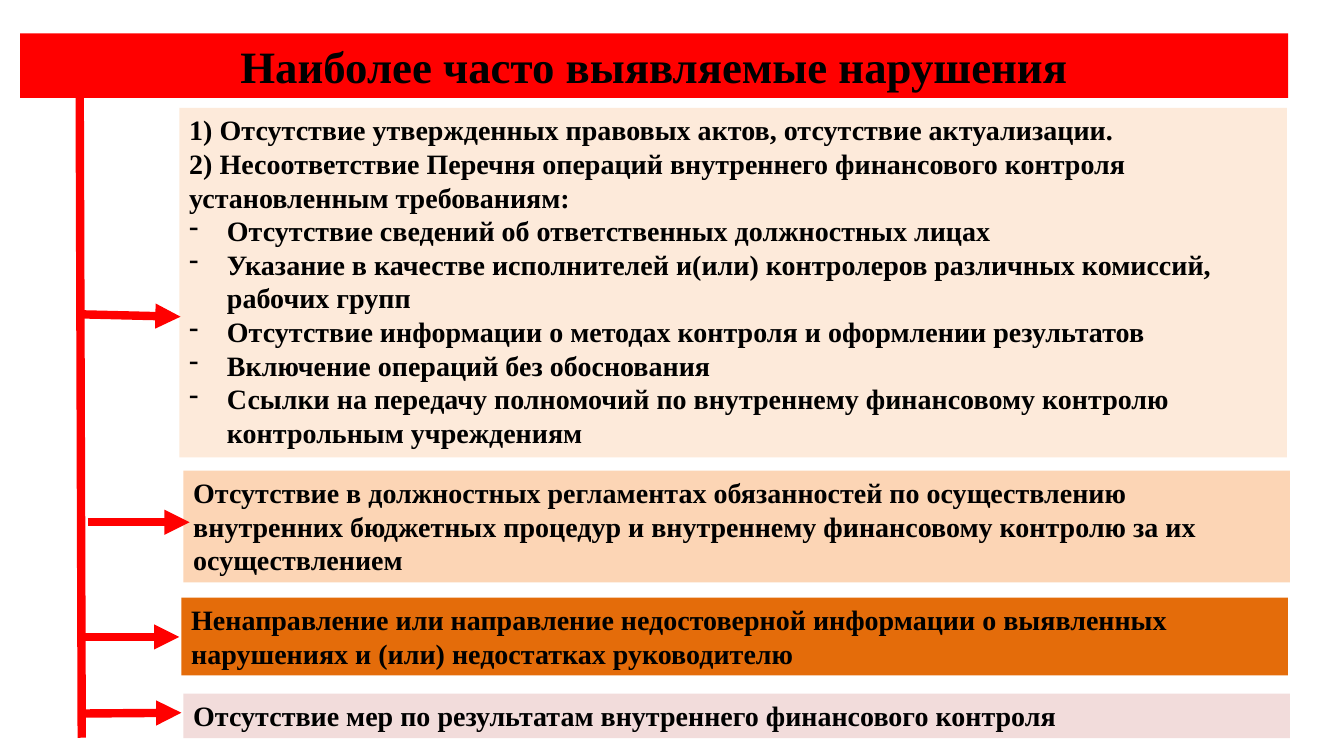
"""Builds a slide listing the most frequent control violations."""
from dataclasses import dataclass

from lxml import etree
from pptx import Presentation
from pptx.dml.color import RGBColor
from pptx.enum.shapes import MSO_CONNECTOR
from pptx.enum.text import MSO_ANCHOR, MSO_AUTO_SIZE, PP_ALIGN
from pptx.oxml.ns import qn
from pptx.util import Cm, Pt

LINE = MSO_CONNECTOR.STRAIGHT
MIDDLE = MSO_ANCHOR.MIDDLE
TOP = MSO_ANCHOR.TOP
FIXED = MSO_AUTO_SIZE.NONE
CENTER = PP_ALIGN.CENTER
LEFT = PP_ALIGN.LEFT


@dataclass(frozen=True)
class Theme:
    """Colours, font and sizes of the slide."""
    font: str = "Times New Roman"
    ink: str = "000000"
    red: str = "FF0000"
    pale: str = "FDEADA"
    peach: str = "FCD5B5"
    orange: str = "E46C0A"
    rose: str = "F2DCDB"
    head: int = 32
    body: int = 20
    stroke: int = 6
    hang: float = 0.95


class Board:
    """Holds the theme and the current slide."""

    def __init__(self, slide, theme):
        self.slide = slide
        self.theme = theme

    def fill(self, shape, color):
        shape.fill.solid()
        shape.fill.fore_color.rgb = RGBColor.from_string(color)

    def label(self, para, text, size, align):
        para.alignment = align
        run = para.add_run()
        run.text = text
        font = run.font
        font.name = self.theme.font
        font.size = Pt(size)
        font.bold = True
        font.color.rgb = RGBColor.from_string(self.theme.ink)

    def dash(self, para):
        props = para._p.get_or_add_pPr()
        hang = Cm(self.theme.hang)
        props.set("marL", str(hang))
        props.set("indent", str(-hang))
        etree.SubElement(props, qn("a:buFontTx"))
        etree.SubElement(props, qn("a:buChar")).set("char", "-")

    def title(self, text, left, top, width, height):
        shape = self.slide.shapes.title
        shape.left, shape.top = Cm(left), Cm(top)
        shape.width, shape.height = Cm(width), Cm(height)
        self.fill(shape, self.theme.red)
        frame = shape.text_frame
        frame.auto_size = FIXED
        frame.word_wrap = True
        frame.vertical_anchor = MIDDLE
        self.label(frame.paragraphs[0], text, self.theme.head, CENTER)

    def panel(self, left, top, width, height, color, lines, points=()):
        box = self.slide.shapes.add_textbox(
            Cm(left), Cm(top), Cm(width), Cm(height))
        self.fill(box, color)
        frame = box.text_frame
        frame.word_wrap = True
        frame.vertical_anchor = TOP
        for i, text in enumerate((*lines, *points)):
            para = frame.add_paragraph() if i else frame.paragraphs[0]
            if i >= len(lines):
                self.dash(para)
            self.label(para, text, self.theme.body, LEFT)

    def line(self, x1, y1, x2, y2, arrow=False):
        link = self.slide.shapes.add_connector(
            LINE, Cm(x1), Cm(y1), Cm(x2), Cm(y2))
        link.line.width = Pt(self.theme.stroke)
        link.line.color.rgb = RGBColor.from_string(self.theme.red)
        if arrow:
            stroke = link.line._get_or_add_ln()
            etree.SubElement(stroke, qn("a:tailEnd")).set("type", "triangle")
        etree.SubElement(link._element.spPr, qn("a:effectLst"))


def main():
    deck = Presentation()
    deck.slide_width, deck.slide_height = Cm(33.87), Cm(19.05)
    theme = Theme()
    board = Board(deck.slides.add_slide(deck.slide_layouts[5]), theme)

    board.title("Наиболее часто выявляемые нарушения", 0.51, 0.84, 31.95, 1.63)
    board.panel(
        4.52, 2.72, 27.91, 8.81, theme.pale,
        ["1) Отсутствие утвержденных правовых актов, отсутствие актуализации.",
         "2) Несоответствие Перечня операций внутреннего финансового контроля "
         "установленным требованиям:"],
        ["Отсутствие сведений об ответственных должностных лицах",
         "Указание в качестве исполнителей и(или) контролеров различных "
         "комиссий, рабочих групп",
         "Отсутствие информации о методах контроля и оформлении результатов",
         "Включение операций без обоснования",
         "Ссылки на передачу полномочий по внутреннему финансовому контролю "
         "контрольным учреждениям"])

    panels = [
        (4.62, 11.86, 2.82, theme.peach,
         "Отсутствие в должностных регламентах обязанностей по осуществлению "
         "внутренних бюджетных процедур и внутреннему финансовому контролю "
         "за их осуществлением"),
        (4.57, 15.06, 1.96, theme.orange,
         "Ненаправление или направление недостоверной информации о выявленных "
         "нарушениях и (или) недостатках руководителю"),
        (4.62, 17.48, 1.12, theme.rose,
         "Отсутствие мер по результатам внутреннего финансового контроля"),
    ]
    for left, top, height, color, text in panels:
        board.panel(left, top, 27.89, height, color, [text])

    board.line(2.01, 2.46, 2.06, 18.59)
    arrows = [
        (2.01, 7.92, 4.55, 7.98),
        (2.21, 13.16, 4.78, 13.16),
        (1.96, 16.05, 4.52, 16.05),
        (2.01, 17.98, 4.57, 17.96),
    ]
    for ends in arrows:
        board.line(*ends, arrow=True)

    deck.save("out.pptx")


if __name__ == "__main__":
    main()
